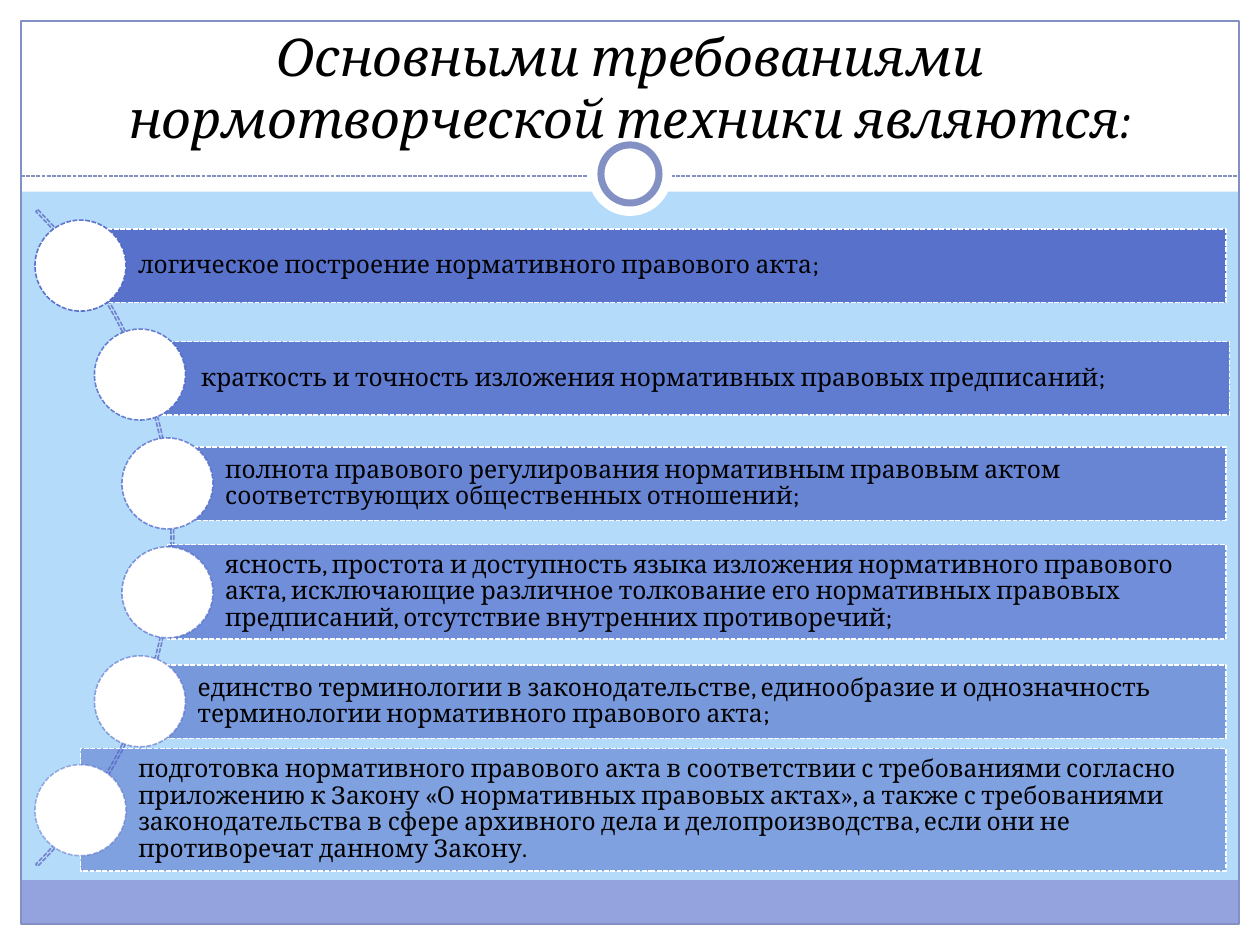
from lxml.etree import SubElement
from pptx import Presentation
from pptx.dml.color import RGBColor
from pptx.enum.dml import MSO_LINE
from pptx.enum.shapes import MSO_CONNECTOR, MSO_SHAPE
from pptx.enum.text import MSO_ANCHOR, PP_ALIGN
from pptx.oxml.ns import qn
from pptx.util import Pt

WHITE, EDGE, BLUE = "FFFFFF", "8390C4", "4E67C8"
FONT = "Cambria"

# text, bar top, bar height, circle left, bar nudge
ITEMS = [
    ("логическое построение нормативного правового акта;", 131, 42, 20, 0),
    ("краткость и точность изложения нормативных правовых предписаний;",
     195.2, 42, 54, 2),
    ("полнота правового регулирования нормативным правовым актом "
     "соответствующих общественных отношений;", 255.4, 42, 69.7, 0),
    ("ясность, простота и доступность языка изложения нормативного правового "
     "акта, исключающие различное толкование его нормативных правовых "
     "предписаний, отсутствие внутренних противоречий;", 311.2, 54, 69.7, 0),
    ("единство терминологии в законодательстве, единообразие и однозначность "
     "терминологии нормативного правового акта;", 380, 42, 54, 0),
    ("подготовка нормативного правового акта в соответствии с требованиями "
     "согласно приложению к Закону «О нормативных правовых актах», а также с "
     "требованиями законодательства в сфере архивного дела и делопроизводства, "
     "если они не противоречат данному Закону.", 427.7, 70, 20, 0),
]


def paint(fill, color, alpha=100):
    fill.solid()
    fill.fore_color.rgb = RGBColor.from_string(color)
    if alpha < 100:
        tint = fill._xPr.find(qn("a:solidFill"))[0]
        SubElement(tint, qn("a:alpha")).set("val", str(alpha * 1000))


def stroke(line, color, width, dashed=False, alpha=100):
    paint(line.fill, color, alpha)
    line.width = Pt(width)
    if dashed:
        line.dash_style = MSO_LINE.SQUARE_DOT


def draw(slide, kind, box, fill=None, alpha=100):
    shape = slide.shapes.add_shape(kind, *map(Pt, box))
    shape.shadow.inherit = False
    shape.line.fill.background()
    if fill:
        paint(shape.fill, fill, alpha)
    else:
        shape.fill.background()
    return shape


def write(shape, text, size, align, frame, italic=False, spacing=None):
    body = shape.text_frame
    for name, value in frame.items():
        setattr(body, name, value)
    para = body.paragraphs[0]
    para.alignment = align
    para.line_spacing = spacing
    run = para.add_run()
    run.text = text
    look = {"name": FONT, "size": Pt(size), "italic": italic}
    for name, value in look.items():
        setattr(run.font, name, value)
    run.font.color.rgb = RGBColor.from_string("000000")


def add_frame(slide, box):
    left, top, width, height = box
    rim = 12
    # White margins and header, then the footer band
    for part in [(left, top + height - rim, width, rim),
                 (left, top, width, 109.5),
                 (left, top, rim, height),
                 (left + width - rim, top, rim, height)]:
        draw(slide, MSO_SHAPE.RECTANGLE, part, WHITE)
    inner = width - 2 * rim
    draw(slide, MSO_SHAPE.RECTANGLE,
         (left + rim, top + 503, inner, 25), "94A3DE")
    edge = draw(slide, MSO_SHAPE.RECTANGLE,
                (left + rim, top + rim, inner, height - 2 * rim))
    stroke(edge.line, EDGE, 0.75)
    # Dashed rule
    rule = slide.shapes.add_connector(
        MSO_CONNECTOR.STRAIGHT, Pt(left + rim), Pt(top + 100.6),
        Pt(left + width - rim), Pt(top + 100.6))
    stroke(rule.line, EDGE, 0.75, True)
    SubElement(rule._element.spPr, qn("a:effectLst"))
    # Ring over the rule
    mid, level = left + width / 2, top + 99.4
    for size in (48, 33.2):
        ring = draw(slide, MSO_SHAPE.OVAL,
                    (mid - size / 2, level - size / 2, size, size), WHITE)
    stroke(ring.line, EDGE, 4)


def add_title(slide, box):
    title = slide.shapes.add_textbox(*map(Pt, box))
    write(title, "Основными требованиями нормотворческой техники являются:",
          29.7, PP_ALIGN.CENTER,
          {"word_wrap": True, "vertical_anchor": MSO_ANCHOR.BOTTOM},
          italic=True)


def add_list(slide, box):
    left, top, width, height = box
    # Arc behind the circles
    size = 530.6
    arc = draw(slide, MSO_SHAPE.BLOCK_ARC,
               (left - 451.3, top + (height - size) / 2, size, size))
    for i, value in enumerate((189, 27, 0.003)):
        arc.adjustments[i] = value
    stroke(arc.line, "7382CE", 0.9, True)
    # Bars and circles
    dot = 52
    step = (height - dot) / (len(ITEMS) - 1)
    frame = {"word_wrap": True, "vertical_anchor": MSO_ANCHOR.MIDDLE,
             "margin_left": Pt(33), "margin_top": Pt(2.8),
             "margin_right": Pt(2.8), "margin_bottom": Pt(2.8)}
    for i, (text, y, high, x, nudge) in enumerate(ITEMS):
        alpha = 90 - 8 * i
        start = x + dot / 2
        bar = draw(slide, MSO_SHAPE.RECTANGLE,
                   (start + nudge, y, left + width - start, high),
                   BLUE, alpha)
        stroke(bar.line, WHITE, 0.9, True)
        write(bar, text, 14, PP_ALIGN.LEFT, frame, spacing=0.9)
        circle = draw(slide, MSO_SHAPE.OVAL,
                      (x, top + i * step, dot, dot), WHITE)
        stroke(circle.line, BLUE, 0.9, True, alpha)


def main():
    deck = Presentation()
    deck.slide_width, deck.slide_height = Pt(720), Pt(540)
    slide = deck.slides.add_slide(deck.slide_layouts[6])
    paint(slide.background.fill, "B4DCFA")
    add_frame(slide, (0, 0, 720, 540))
    add_title(slide, (24, 18, 672, 70.6))
    add_list(slide, (20, 125.8, 680.5, 363.2))
    deck.save("out.pptx")


if __name__ == "__main__":
    main()
